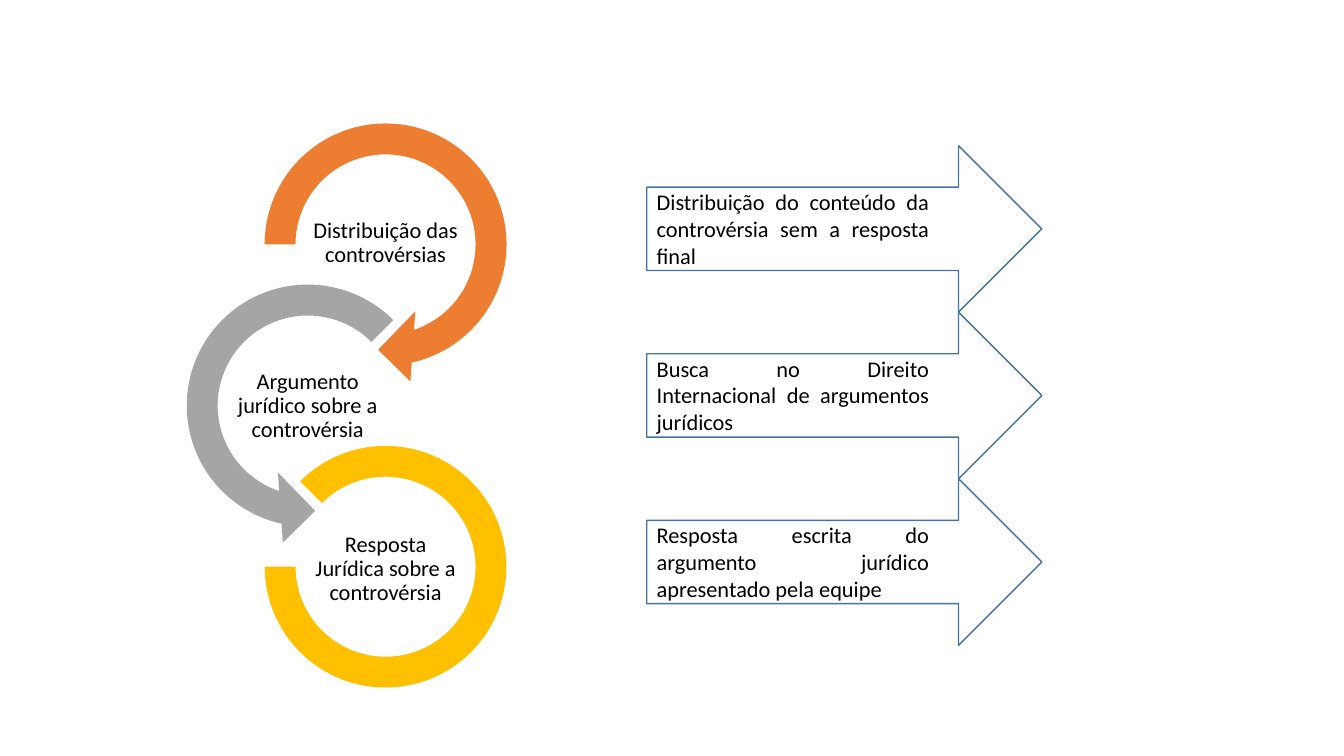
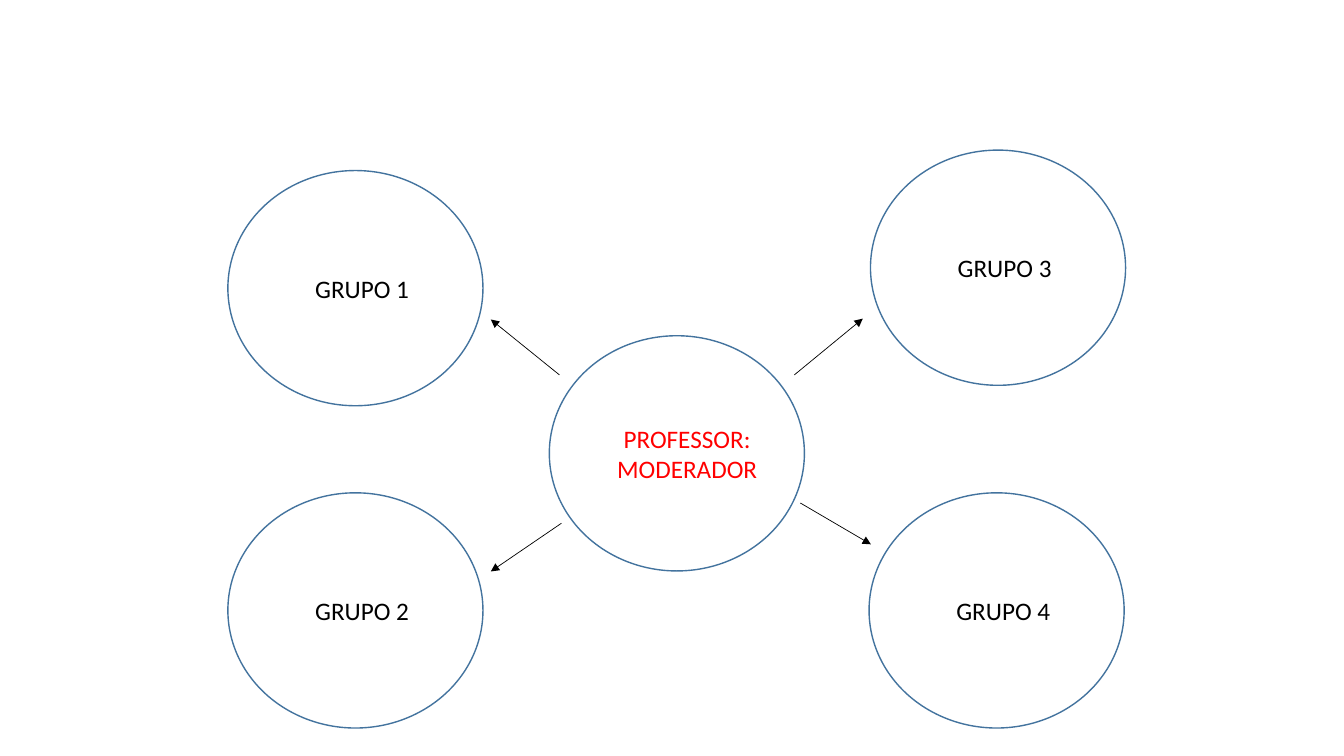
from lxml import etree
from pptx import Presentation
from pptx.dml.color import RGBColor
from pptx.enum import shapes, text
from pptx.oxml.ns import qn
from pptx.util import Pt

MSO = shapes.MSO_SHAPE
ALIGN = text.PP_ALIGN

FONT = "Calibri"
BLACK = RGBColor(0x00, 0x00, 0x00)
RED = RGBColor(0xFF, 0x00, 0x00)
OUTLINE = RGBColor(0x43, 0x73, 0x9E)
ORANGE = RGBColor(0xED, 0x7D, 0x31)
GRAY = RGBColor(0xA5, 0xA5, 0xA5)
GOLD = RGBColor(0xFF, 0xC0, 0x00)

# Preset, colour, diameter, centre shift, adjustments, label, label shift down
RINGS = [
    (MSO.CIRCULAR_ARROW, ORANGE, 201, 0, (0.1098, 11.42, 45, 108, 0.125),
     "Distribuição das controvérsias", -0.7),
    (MSO.LEFT_CIRCULAR_ARROW, GRAY, 201, -55.6, (0.1098, 11.42, 63, 189, 0.125),
     "Argumento jurídico sobre a controvérsia", 0.7),
    (MSO.BLOCK_ARC, GOLD, 172.6, 0, (135, 108, 0.1274),
     "Resposta Jurídica sobre a controvérsia", 2),
]
STEPS = [
    "Distribuição do conteúdo da controvérsia sem a resposta final",
    "Busca no Direito Internacional de argumentos jurídicos",
    "Resposta escrita do argumento jurídico apresentado pela equipe",
]

CIRCLE_W, CIRCLE_H = 182.2, 168
GROUPS = [
    ("GRUPO 1", 162.8, 121.8),
    ("GRUPO 2", 162.8, 352),
    ("GRUPO 3", 621.8, 107.2),
    ("GRUPO 4", 620.8, 352),
]
# Start and end of each arrow, measured from the corner of the centre circle
SPOKES = [
    ((7.2, 28), (-41.8, -11.6)),
    ((8.6, 134), (-41.8, 168.4)),
    ((175, 28), (223.9, -12.2)),
    ((179.3, 119.5), (229.7, 149)),
]


def add_shape(s, preset, left, top, width, height, fill=None):
    """Filled shape without a line, or an outlined one when fill is None."""
    sp = s.shapes.add_shape(preset, Pt(left), Pt(top), Pt(width), Pt(height))
    sp.shadow.inherit = False
    if fill is None:
        sp.fill.background()
        sp.line.color.rgb = OUTLINE
        sp.line.width = Pt(1)
    else:
        sp.fill.solid()
        sp.fill.fore_color.rgb = fill
        sp.line.fill.background()
    return sp


def add_label(s, words, left, top, width, height, size, align=ALIGN.LEFT, color=BLACK):
    tf = s.shapes.add_textbox(Pt(left), Pt(top), Pt(width), Pt(height)).text_frame
    tf.word_wrap = True
    p = tf.paragraphs[0]
    p.alignment = align
    r = p.add_run()
    r.text = words
    r.font.name = FONT
    r.font.size = Pt(size)
    r.font.color.rgb = color
    return tf


def add_arrow(s, start, end):
    line = s.shapes.add_connector(shapes.MSO_CONNECTOR.STRAIGHT,
                                  *(Pt(v) for v in (*start, *end)))
    line.line.color.rgb = BLACK
    line.line.width = Pt(0.5)
    etree.SubElement(line.line._get_or_add_ln(), qn("a:tailEnd"), type="triangle")
    etree.SubElement(line._element.spPr, qn("a:effectLst"))


def ring_chain(s, center_x, first_y, pitch):
    label_w, label_h = 111.6, 55.4
    for i, (preset, color, size, shift, adjustments, words, drop) in enumerate(RINGS):
        x, y = center_x + shift, first_y + i * pitch
        sp = add_shape(s, preset, x - size / 2, y - size / 2, size, size, color)
        for k, value in enumerate(adjustments):
            sp.adjustments[k] = value
        tf = add_label(s, words, x - label_w / 2, y + drop - label_h / 2,
                       label_w, label_h, 16, ALIGN.CENTER)
        tf.margin_left = tf.margin_right = tf.margin_top = tf.margin_bottom = Pt(0.8)
        tf.vertical_anchor = text.MSO_ANCHOR.MIDDLE
        tf.paragraphs[0].line_spacing = 0.9


def step_arrows(s, left, top, width, height):
    pitch = height / len(STEPS)
    for i, words in enumerate(STEPS):
        y = top + i * pitch
        add_shape(s, MSO.RIGHT_ARROW, left, y, width, pitch)
        add_label(s, words, left, y + 26.8, 208.8, 65.4, 16, ALIGN.JUSTIFY)


def process_slide(s):
    ring_chain(s, 275.4, 174.6, 115.1)
    step_arrows(s, 462, 104, 282.2, 357)


def moderator_circle(s, left, top):
    add_shape(s, MSO.OVAL, left, top, CIRCLE_W, CIRCLE_H)
    add_label(s, "PROFESSOR: MODERADOR", left + 39, top + 59, 118.8, 51, 18,
              ALIGN.CENTER, RED)
    for spoke in SPOKES:
        add_arrow(s, *((left + dx, top + dy) for dx, dy in spoke))


def group_circle(s, name, left, top):
    add_shape(s, MSO.OVAL, left, top, CIRCLE_W, CIRCLE_H)
    add_label(s, name, left + 55.2, top + 69.6, 87.8, 29, 18)


def groups_slide(s):
    for group in GROUPS:
        group_circle(s, *group)
    moderator_circle(s, 392.4, 239.8)


def main():
    prs = Presentation()
    prs.slide_width, prs.slide_height = Pt(960), Pt(540)
    for build in (process_slide, groups_slide):
        build(prs.slides.add_slide(prs.slide_layouts[6]))
    prs.save("out.pptx")


if __name__ == "__main__":
    main()
